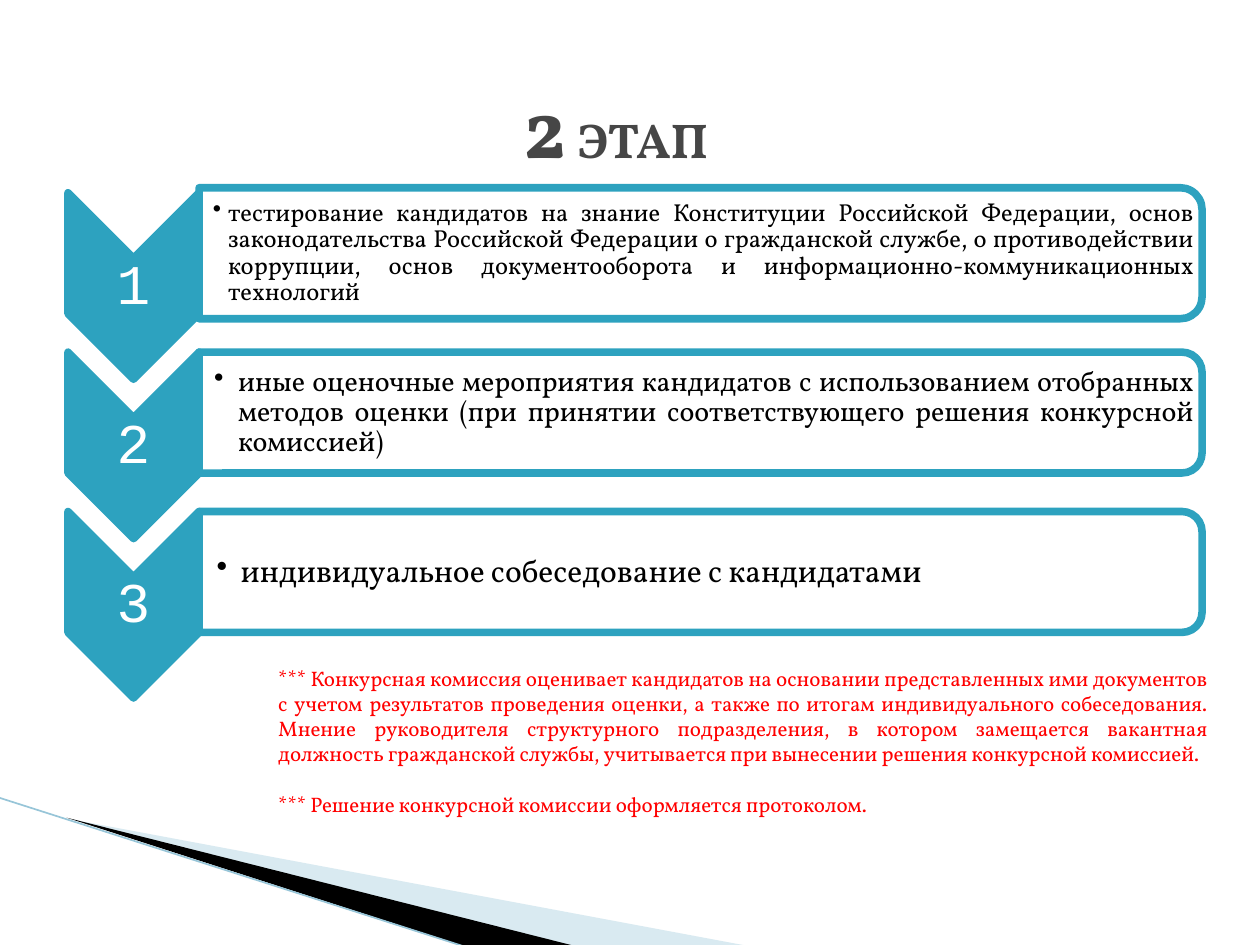
from dataclasses import dataclass

from lxml import etree
from pptx import Presentation
from pptx import util as u
from pptx.dml.color import RGBColor
from pptx.enum import shapes, text
from pptx.oxml.ns import qn


@dataclass(frozen=True)
class Theme:
    teal: str = "2DA2BF"
    pale: str = "A0CBDC"
    edge: str = "97C5D8"
    black: str = "000000"
    white: str = "FFFFFF"
    grey: str = "464646"
    red: str = "FF0000"
    serif: str = "Vollkorn"
    mono: str = "Courier New"
    title_number: float = 47.7
    title_word: float = 27.9
    number: float = 32
    note: float = 12
    outline: float = 4.33


THEME = Theme()
WIDTH, HEIGHT = 10, 7.5
ROW_PITCH = 1.265
CHEVRON_X, CHEVRON_Y = 1.06, 2.27
CHEVRON_LENGTH, CHEVRON_WIDTH = 1.48, 1.04
BODY_LEFT, BODY_WIDTH, BODY_Y = 1.58, 7.96, 2.01

STAGES = [
    ("тестирование кандидатов на знание Конституции Российской Федерации, "
     "основ законодательства Российской Федерации о гражданской службе, "
     "о противодействии коррупции, основ документооборота и "
     "информационно-коммуникационных технологий",
     14, 1.04, 0.11, 0.12, text.PP_ALIGN.JUSTIFY),
    ("иные оценочные мероприятия кандидатов с использованием отобранных "
     "методов оценки (при принятии соответствующего решения конкурсной "
     "комиссией)",
     16, 0.96, 0.12, 0.19, text.PP_ALIGN.JUSTIFY),
    ("индивидуальное собеседование с кандидатами",
     18, 0.96, 0.14, 0.19, text.PP_ALIGN.LEFT),
]
NOTES = [
    "*** Конкурсная комиссия оценивает кандидатов на основании "
    "представленных ими документов с учетом результатов проведения оценки, "
    "а также по итогам индивидуального собеседования. Мнение руководителя "
    "структурного подразделения, в котором замещается вакантная должность "
    "гражданской службы, учитывается при вынесении решения конкурсной "
    "комиссией.",
    "*** Решение конкурсной комиссии оформляется протоколом.",
]


def paint(shape, color, opacity=100, outline=None):
    shape.shadow.inherit = False
    shape.fill.solid()
    shape.fill.fore_color.rgb = RGBColor.from_string(color)
    if opacity < 100:
        tint = shape.fill._xPr.find(qn("a:solidFill"))[0]
        etree.SubElement(tint, qn("a:alpha"), val=str(opacity * 1000))
    if outline:
        shape.line.color.rgb = RGBColor.from_string(outline)
        shape.line.width = u.Pt(THEME.outline)
    else:
        shape.line.fill.background()


def add_turned(page, kind, center_x, center_y, length, breadth):
    shape = page.shapes.add_shape(
        kind, u.Inches(center_x - length / 2),
        u.Inches(center_y - breadth / 2), u.Inches(length), u.Inches(breadth))
    shape.rotation = 90
    return shape


def add_box(page, left, top, width, height, insets=(0.1, 0.05, 0.1, 0.05),
            anchor=text.MSO_ANCHOR.MIDDLE):
    box = page.shapes.add_textbox(*map(u.Inches, (left, top, width, height)))
    frame = box.text_frame
    frame.word_wrap = True
    frame.vertical_anchor = anchor
    (frame.margin_left, frame.margin_top,
     frame.margin_right, frame.margin_bottom) = map(u.Inches, insets)
    return frame


def add_span(para, words, size, color, font=THEME.serif, bold=False):
    span = para.add_run()
    span.text = words
    span.font.size = u.Pt(size)
    span.font.name = font
    span.font.bold = bold
    span.font.color.rgb = RGBColor.from_string(color)


def set_bullet(para, indent):
    props = para._p.get_or_add_pPr()
    props.set("marL", str(u.Inches(indent)))
    props.set("indent", str(-u.Inches(indent)))
    etree.SubElement(props, qn("a:buChar"), char="•")


def add_wedge(page, points, color, opacity=100):
    builder = page.shapes.build_freeform(
        *map(u.Inches, points[0]), scale=1.0)
    builder.add_line_segments(
        [tuple(map(u.Inches, point)) for point in points[1:]], close=True)
    paint(builder.convert_to_shape(), color, opacity)


def add_corner(page):
    add_wedge(page, [(0.55, 6.5), (5.95, 7.51), (4.56, 7.51)],
              THEME.pale, 40)
    add_wedge(page, [(0.53, 6.49), (4.57, 7.51), (3.72, 7.52)], THEME.black)
    edge = page.shapes.add_connector(
        shapes.MSO_CONNECTOR.STRAIGHT,
        *map(u.Inches, (-0.01, 6.33, 3.71, 7.52)))
    edge.line.color.rgb = RGBColor.from_string(THEME.edge)
    edge.line.width = u.Pt(0.95)
    etree.SubElement(edge._element.spPr, qn("a:effectLst"))


def add_stage(page, row, words, size, height, inset, indent, align):
    chevron_y = CHEVRON_Y + row * ROW_PITCH
    body_y = BODY_Y + row * ROW_PITCH
    chevron = add_turned(page, shapes.MSO_SHAPE.CHEVRON, CHEVRON_X,
                         chevron_y, CHEVRON_LENGTH, CHEVRON_WIDTH)
    paint(chevron, THEME.teal, outline=THEME.teal)
    number = add_box(page, CHEVRON_X - CHEVRON_WIDTH / 2, chevron_y - 0.22,
                     CHEVRON_WIDTH, 0.44, (0.02,) * 4).paragraphs[0]
    number.alignment = text.PP_ALIGN.CENTER
    number.line_spacing = 0.9
    add_span(number, str(row + 1), THEME.number, THEME.white, THEME.mono)

    body = add_turned(page, shapes.MSO_SHAPE.ROUND_2_SAME_RECTANGLE,
                      BODY_LEFT + BODY_WIDTH / 2, body_y, height, BODY_WIDTH)
    paint(body, THEME.white, 90, THEME.teal)
    para = add_box(page, BODY_LEFT, body_y - height / 2 + 0.05,
                   BODY_WIDTH - 0.05, height - 0.1,
                   (inset, 0.01, 0.01, 0.01)).paragraphs[0]
    para.alignment = align
    para.line_spacing = 0.9
    set_bullet(para, indent)
    add_span(para, words, size, THEME.black)


def add_title(page):
    para = add_box(page, 0.39, 0.52, 0.9 * WIDTH, 0.94).paragraphs[0]
    para.alignment = text.PP_ALIGN.CENTER
    add_span(para, "2", THEME.title_number, THEME.grey, bold=True)
    add_span(para, " ЭТАП", THEME.title_word, THEME.grey, bold=True)


def add_notes(page):
    frame = add_box(page, 2.11, 5.23, 7.58, 1.51, anchor=text.MSO_ANCHOR.TOP)
    for index, words in enumerate(NOTES):
        para = frame.add_paragraph() if index else frame.paragraphs[0]
        para.alignment = text.PP_ALIGN.JUSTIFY
        if index:
            para.space_before = u.Pt(14.5)
        add_span(para, words, THEME.note, THEME.red)


def main():
    deck = Presentation()
    deck.slide_width, deck.slide_height = u.Inches(WIDTH), u.Inches(HEIGHT)
    page = deck.slides.add_slide(deck.slide_layouts[6])
    add_corner(page)
    for row, stage in enumerate(STAGES):
        add_stage(page, row, *stage)
    add_title(page)
    add_notes(page)
    deck.save("out.pptx")


if __name__ == "__main__":
    main()
